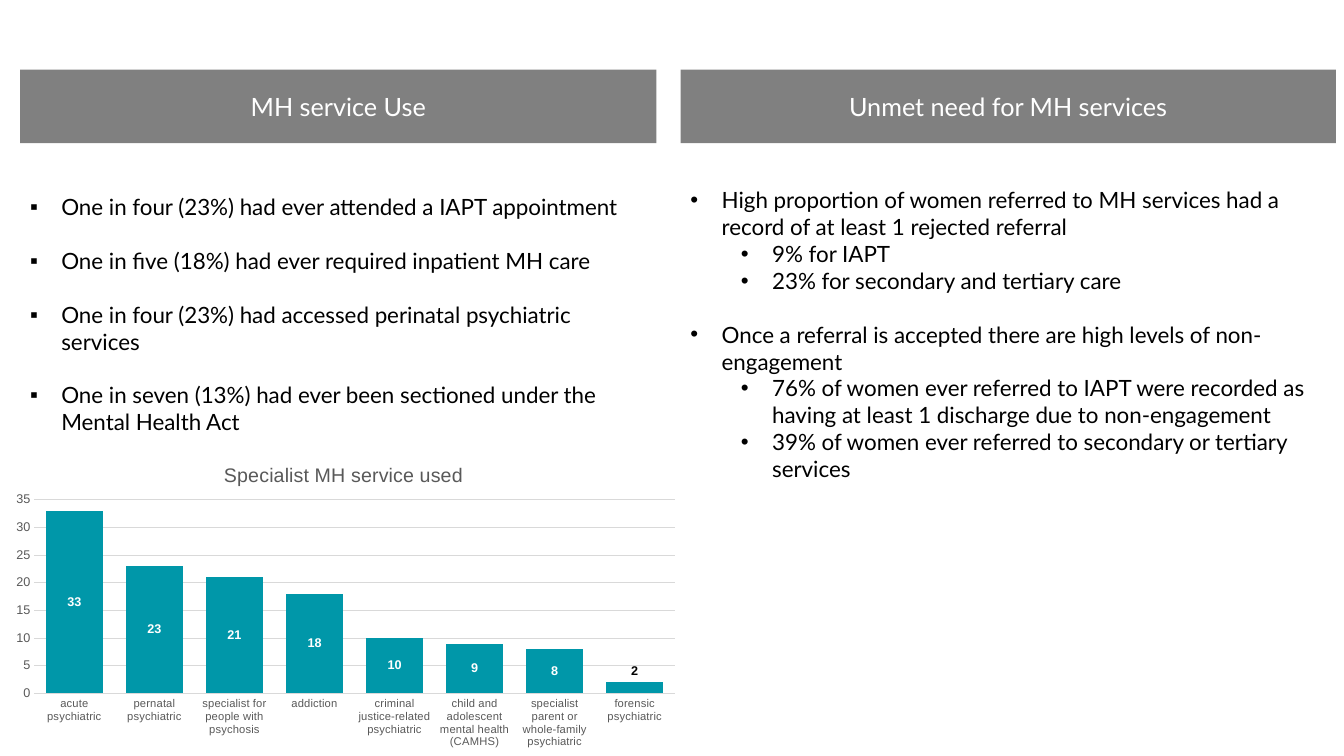
from lxml import etree
from pptx import Presentation
from pptx.chart.data import CategoryChartData
from pptx.dml.color import RGBColor
from pptx.enum.chart import XL_CHART_TYPE as ChartType
from pptx.enum.chart import XL_LABEL_POSITION as LabelPosition
from pptx.enum.chart import XL_TICK_MARK as TickMark
from pptx.enum.shapes import MSO_SHAPE as Shape
from pptx.enum.text import MSO_ANCHOR as Anchor
from pptx.enum.text import PP_ALIGN as Align
from pptx.oxml.ns import qn
from pptx.util import Inches, Pt

GREY, TEAL, WHITE, BLACK = "808080", "0097A9", "FFFFFF", "000000"
AXIS_TEXT, AXIS_LINE = "595959", "D9D9D9"
LINE_GAP = 19.2  # one text line, in points

# Column geometry: left, width
LEFT_COLUMN = (0.2, 6.31)
RIGHT_COLUMN = (6.75, 6.5)

# Bullets: level, text, whether a gap precedes it
SERVICE_USE = [
    (0, "One in four (23%) had ever attended a IAPT appointment", False),
    (0, "One in five (18%) had ever required inpatient MH care", True),
    (0, "One in four (23%) had accessed perinatal psychiatric services", True),
    (0, "One in seven (13%) had ever been sectioned under the Mental Health Act", True),
]
UNMET_NEED = [
    (0, "High proportion of women referred to MH services had a record of "
        "at least 1 rejected referral", False),
    (1, "9% for IAPT", False),
    (1, "23% for secondary and tertiary care", False),
    (0, "Once a referral is accepted there are high levels of non-engagement", True),
    (1, "76% of women ever referred to IAPT were recorded as having at least 1 "
        "discharge due to non-engagement", False),
    (1, "39% of women ever referred to secondary or tertiary services", False),
]
SERVICES = {
    "acute psychiatric": 33,
    "pernatal psychiatric": 23,
    "specialist for people with psychosis": 21,
    "addiction": 18,
    "criminal justice-related psychiatric": 10,
    "child and adolescent mental health (CAMHS)": 9,
    "specialist parent or whole-family psychiatric": 8,
    "forensic psychiatric": 2,
}


def color(value):
    return RGBColor.from_string(value)


def style_font(font, size, fill, name="Arial", bold=False):
    font.size = Pt(size)
    font.name = name
    font.bold = bold
    font.color.rgb = color(fill)


def add_box(page, column, top, height, fill):
    left, width = column
    box = page.shapes.add_shape(
        Shape.RECTANGLE, Inches(left), Inches(top), Inches(width), Inches(height))
    box.shadow.inherit = False
    box.fill.solid()
    box.fill.fore_color.rgb = color(fill)
    box.line.fill.background()
    box.text_frame.word_wrap = True
    return box


def add_heading(page, column, text):
    box = add_box(page, column, 0.69, 0.73, GREY)
    box.text_frame.text = text
    box.text_frame.vertical_anchor = Anchor.MIDDLE
    para = box.text_frame.paragraphs[0]
    para.alignment = Align.CENTER
    style_font(para.runs[0].font, 18, WHITE, "Lato")


def set_bullet(para, level, mark):
    para.level = level
    props = para._p.get_or_add_pPr()
    props.set("marL", str(Inches(0.31 + 0.5 * level)))
    props.set("indent", str(-Inches(0.31)))
    etree.SubElement(props, qn("a:buFont")).set("typeface", "Arial")
    etree.SubElement(props, qn("a:buChar")).set("char", mark)


def add_bullets(page, column, top, height, mark, items):
    box = add_box(page, column, top, height, WHITE)
    frame = box.text_frame
    frame.vertical_anchor = Anchor.TOP
    frame.margin_top = Inches(0.32)
    for index, (level, text, gap) in enumerate(items):
        para = frame.add_paragraph() if index else frame.paragraphs[0]
        para.text = text
        para.alignment = Align.LEFT
        if gap:
            para.space_before = Pt(LINE_GAP)
        set_bullet(para, level, mark)
        style_font(para.runs[0].font, 16, BLACK, "Lato")


def set_layout(element, **settings):
    """Place a chart part by fractions of the chart area."""
    for old in element.findall(qn("c:layout")):
        element.remove(old)
    layout = etree.Element(qn("c:layout"))
    manual = etree.SubElement(layout, qn("c:manualLayout"))
    for tag, value in settings.items():
        etree.SubElement(manual, qn("c:" + tag)).set("val", str(value))
    text = element.find(qn("c:tx"))
    element.insert(0 if text is None else 1, layout)


def style_axis(axis, size):
    axis.major_tick_mark = axis.minor_tick_mark = TickMark.NONE
    style_font(axis.tick_labels.font, size, AXIS_TEXT)


def style_line(line):
    line.color.rgb = color(AXIS_LINE)
    line.width = Pt(0.75)


def add_service_chart(page):
    data = CategoryChartData(number_format="0")
    data.categories = list(SERVICES)
    data.add_series("Series 1", list(SERVICES.values()))
    chart = page.shapes.add_chart(
        ChartType.COLUMN_CLUSTERED, Inches(0), Inches(4.4),
        Inches(6.83), Inches(3.1), data).chart
    chart.has_legend = False
    style_font(chart.font, 10, BLACK)

    # Title and plot placement
    title = chart.chart_title
    title.text_frame.text = "Specialist MH service used"
    style_font(title.text_frame.paragraphs[0].runs[0].font, 14, AXIS_TEXT)
    set_layout(title._element, xMode="edge", yMode="edge", x=0.32, y=0.05)
    set_layout(chart._chartSpace.chart.plotArea, layoutTarget="inner",
               xMode="edge", yMode="edge", x=0.05, y=0.18, w=0.93, h=0.62)

    # Axes
    style_axis(chart.category_axis, 8)
    style_line(chart.category_axis.format.line)
    values = chart.value_axis
    style_axis(values, 9)
    values.minimum_scale, values.maximum_scale, values.major_unit = 0, 35, 5
    values.format.line.fill.background()
    style_line(values.major_gridlines.format.line)

    # Columns and their labels
    plot = chart.plots[0]
    plot.vary_by_categories = False
    plot.gap_width, plot.overlap = 40, -27
    series = plot.series[0]
    series.format.fill.solid()
    series.format.fill.fore_color.rgb = color(TEAL)
    labels = series.data_labels
    labels.show_value = True
    labels.number_format, labels.number_format_is_linked = "0", False
    labels.position = LabelPosition.CENTER
    style_font(labels.font, 9, WHITE, bold=True)
    short_label = series.points[len(SERVICES) - 1].data_label
    style_font(short_label.font, 9, BLACK, bold=True)
    short_label.position = LabelPosition.OUTSIDE_END


def main():
    deck = Presentation()
    deck.slide_width, deck.slide_height = Inches(13.33), Inches(7.5)
    page = deck.slides.add_slide(deck.slide_layouts[6])

    # Right column
    add_bullets(page, RIGHT_COLUMN, 1.53, 4.17, "•", UNMET_NEED)
    add_heading(page, RIGHT_COLUMN, "Unmet need for MH services")

    # Left column
    add_bullets(page, LEFT_COLUMN, 1.6, 3.29, "▪", SERVICE_USE)
    add_heading(page, LEFT_COLUMN, "MH service Use")
    add_service_chart(page)

    deck.save("out.pptx")


if __name__ == "__main__":
    main()
